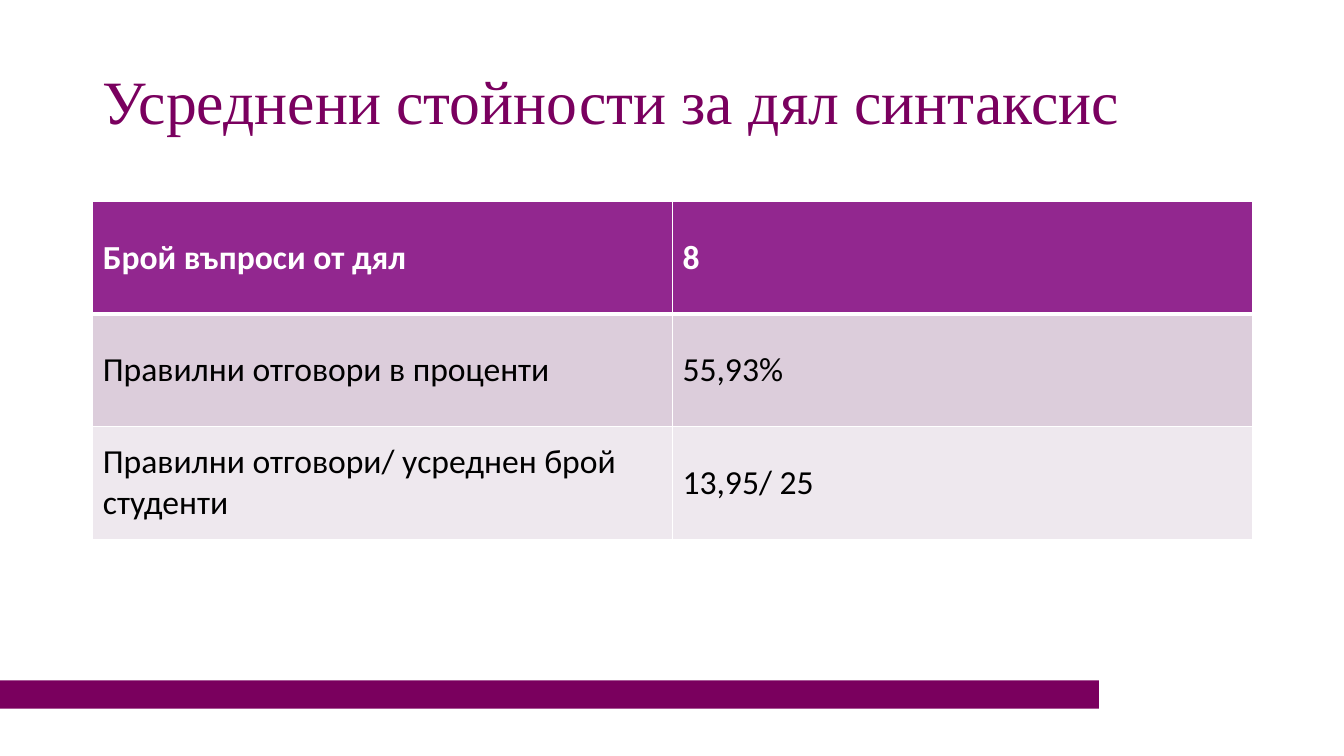
from lxml import etree
from pptx import Presentation
from pptx.dml.color import RGBColor
from pptx.enum import shapes, text
from pptx.oxml.ns import qn
from pptx.util import Inches, Pt


def rgb(color):
    return RGBColor.from_string(color)


def add_border(cell, side, points):
    """Draw a white line on one side (L, R, T or B); call before filling the cell."""
    line = etree.SubElement(cell._tc.get_or_add_tcPr(), qn(f"a:ln{side}"), w=str(Pt(points)))
    fill = etree.SubElement(line, qn("a:solidFill"))
    etree.SubElement(fill, qn("a:srgbClr"), val="FFFFFF")


prs = Presentation()
prs.slide_width, prs.slide_height = Inches(13.33), Inches(7.5)
slide = prs.slides.add_slide(prs.slide_layouts[6])

footer_bar = slide.shapes.add_shape(
    shapes.MSO_SHAPE.RECTANGLE, Inches(0), Inches(6.75), Inches(10.9), Inches(0.28))
footer_bar.shadow.inherit = False
footer_bar.fill.solid()
footer_bar.fill.fore_color.rgb = rgb("7A005E")
footer_bar.line.fill.background()

title = slide.shapes.add_textbox(Inches(0.92), Inches(0.31), Inches(11.5), Inches(1.45)).text_frame
title.word_wrap = True
title.vertical_anchor = text.MSO_ANCHOR.MIDDLE
heading = title.paragraphs[0]
heading.text = "Усреднени стойности за дял синтаксис"
heading.line_spacing = 0.9
heading.font.name = "Times New Roman"
heading.font.size = Pt(44)
heading.font.color.rgb = rgb("7A005F")

averages = [
    ("Брой въпроси от дял", "8"),
    ("Правилни отговори в проценти", "55,93%"),
    ("Правилни отговори/ усреднен брой студенти", "13,95/ 25"),
]
row_fills = ["92278F", "DCCDDB", "EEE8EE"]

table = slide.shapes.add_table(
    len(averages), 2, Inches(0.92), Inches(2), Inches(11.5), Inches(3.35)).table
for r, (values, row_fill) in enumerate(zip(averages, row_fills)):
    is_header = r == 0
    for c, value in enumerate(values):
        cell = table.cell(r, c)
        add_border(cell, "L", 1)
        add_border(cell, "R", 1)
        add_border(cell, "T", 3 if r == 1 else 1)
        add_border(cell, "B", 3 if is_header else 1)
        cell.fill.solid()
        cell.fill.fore_color.rgb = rgb(row_fill)
        cell.vertical_anchor = text.MSO_ANCHOR.MIDDLE
        cell.text = value
        font = cell.text_frame.paragraphs[0].font
        font.name = "Calibri"
        font.size = Pt(24)
        font.bold = is_header
        font.color.rgb = rgb("FFFFFF" if is_header else "000000")

prs.save("out.pptx")
